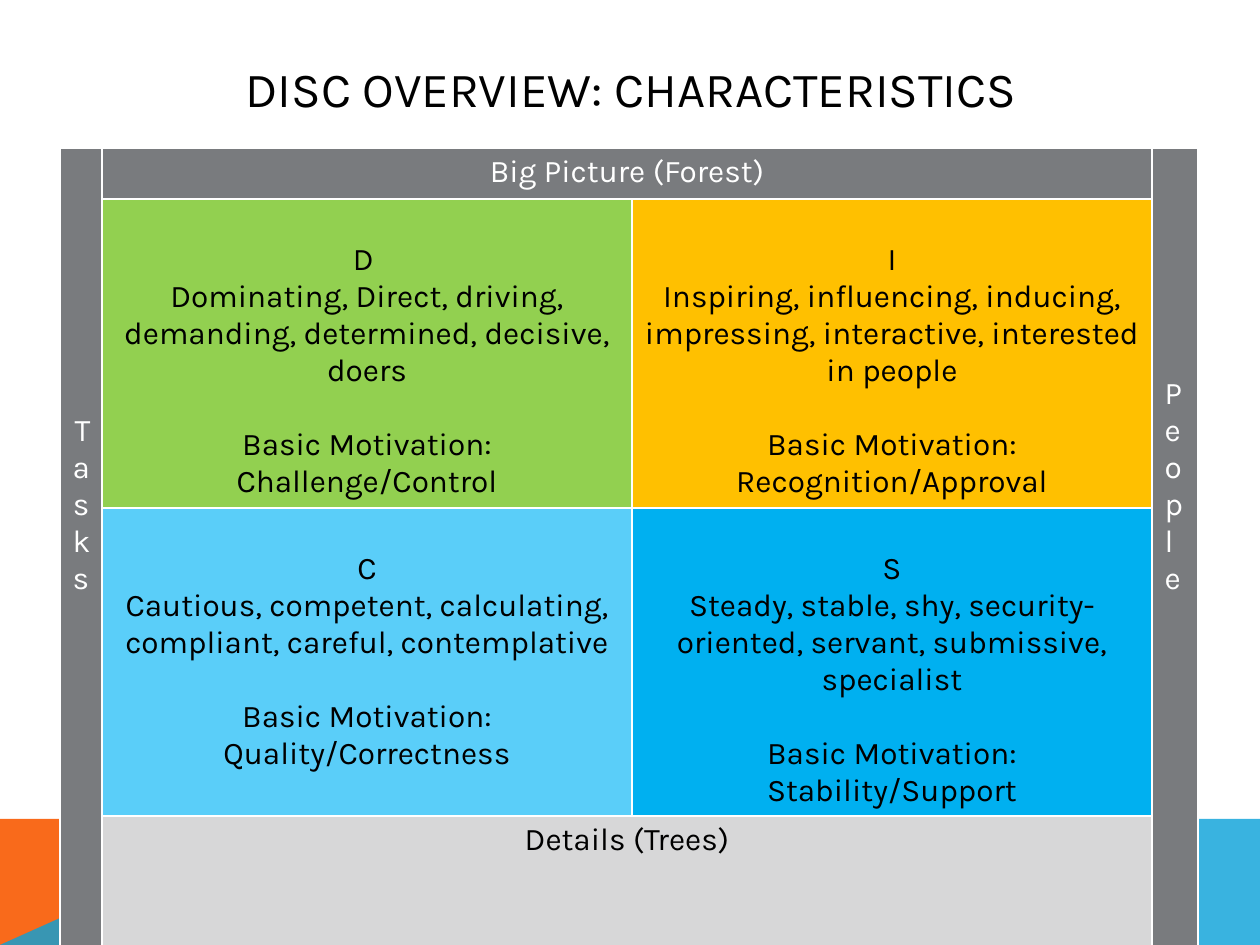
import lxml.etree
import pptx
import pptx.dml.color
import pptx.enum.text
import pptx.oxml.ns
import pptx.util

SCALE = 914400 / 126  # EMU in one px
WIDTH, HEIGHT = 1260, 945
FONT = "Karla"
LINE = 37  # px height of one line of body text
MARGIN = 6  # px above the text of a cell
COLORS = {
    "orange": "F96A1B", "blue": "08A1D9", "gray": "797B7E", "light": "D7D7D8",
    "green": "92D050", "amber": "FFC000", "sky": "5ACEF9", "azure": "00B0F0",
    "white": "FFFFFF", "black": "000000",
}
COLUMNS = [42, 530, 520, 46]
ROWS = [51, 309, 308, 129]
CENTER = pptx.enum.text.PP_ALIGN.CENTER
LEFT = pptx.enum.text.PP_ALIGN.LEFT
# row, column, fill, letter, traits, motivation
QUADRANTS = [
    (1, 1, "green", "D ",
     "Dominating, Direct, driving, demanding, determined, decisive, doers",
     "Challenge/Control"),
    (1, 2, "amber", "I",
     "Inspiring, influencing, inducing, impressing, interactive, interested in people",
     "Recognition/Approval"),
    (2, 1, "sky", "C",
     "Cautious, competent, calculating, compliant, careful, contemplative",
     "Quality/Correctness"),
    (2, 2, "azure", "S",
     "Steady, stable, shy, security-oriented, servant, submissive, specialist",
     "Stability/Support"),
]


def px(length):
    return pptx.util.Emu(round(length * SCALE))


def rgb(name):
    return pptx.dml.color.RGBColor.from_string(COLORS[name])


def add_run(paragraph, text, size, color, align=CENTER):
    paragraph.alignment = align
    run = paragraph.add_run()
    run.text = text
    run.font.name = FONT
    run.font.size = pptx.util.Pt(size)
    run.font.color.rgb = rgb(color)


def add_polygon(slide, points, color, opacity=100):
    builder = slide.shapes.build_freeform(*points[0], scale=SCALE)
    builder.add_line_segments(points[1:], close=True)
    shape = builder.convert_to_shape()
    shape.shadow.inherit = False
    shape.line.fill.background()
    shape.fill.solid()
    shape.fill.fore_color.rgb = rgb(color)
    if opacity < 100:
        value = shape._element.spPr.find(".//" + pptx.oxml.ns.qn("a:srgbClr"))
        lxml.etree.SubElement(value, pptx.oxml.ns.qn("a:alpha"), val=str(opacity * 1000))


def add_footer(slide, left, top, width, height):
    right, bottom, peak = left + width, top + height, left + 281
    add_polygon(slide, [(left, bottom), (left, top), (peak, top), (left + 493, bottom)], "orange")
    add_polygon(slide, [(left, bottom), (peak, top), (right, top), (right, bottom)], "blue", 80)


def add_title(slide, left, top, width, height):
    box = slide.shapes.add_textbox(px(left), px(top), px(width), px(height))
    frame = box.text_frame
    frame.word_wrap = True
    frame.vertical_anchor = pptx.enum.text.MSO_ANCHOR.MIDDLE
    add_run(frame.paragraphs[0], "DISC OVERVIEW: CHARACTERISTICS", 28, "black")


def add_borders(cell):
    properties = cell._tc.get_or_add_tcPr()
    for side in ("lnL", "lnR", "lnT", "lnB"):
        line = lxml.etree.SubElement(properties, pptx.oxml.ns.qn("a:" + side), w="12700")
        fill = lxml.etree.SubElement(line, pptx.oxml.ns.qn("a:solidFill"))
        lxml.etree.SubElement(fill, pptx.oxml.ns.qn("a:srgbClr"), val=COLORS["white"])


def fill_cell(cell, color):
    cell.fill.solid()
    cell.fill.fore_color.rgb = rgb(color)


def write_band(table, first, last, text, fill, color="white", align=CENTER, lines_above=0):
    """Merge the cells from first to last and label them, some lines below the top."""
    cell = table.cell(*first)
    cell.merge(table.cell(*last))
    fill_cell(cell, fill)
    cell.margin_top = px(MARGIN + lines_above * LINE)
    add_run(cell.text_frame.paragraphs[0], text, 18, color, align)


def write_quadrant(cell, fill, letter, traits, motivation):
    fill_cell(cell, fill)
    cell.margin_top = px(MARGIN + LINE)
    frame = cell.text_frame
    add_run(frame.paragraphs[0], letter, 18, "black")
    add_run(frame.add_paragraph(), traits, 18, "black")
    paragraph = frame.add_paragraph()
    paragraph.space_before = pptx.util.Pt(21)
    add_run(paragraph, "Basic Motivation: " + motivation, 18, "black")


def add_matrix(slide, left, top):
    frame = slide.shapes.add_table(
        len(ROWS), len(COLUMNS), px(left), px(top), px(sum(COLUMNS)), px(sum(ROWS)))
    table = frame.table
    table.first_row = table.horz_banding = False
    for column, width in zip(table.columns, COLUMNS):
        column.width = px(width)
    for row, height in zip(table.rows, ROWS):
        row.height = px(height)
    for cell in table.iter_cells():
        add_borders(cell)
        fill_cell(cell, "gray")
    write_band(table, (0, 0), (3, 0), "Tasks", "gray", lines_above=7)
    write_band(table, (0, 3), (3, 3), "People", "gray", align=LEFT, lines_above=6)
    write_band(table, (0, 1), (0, 2), "Big Picture (Forest)", "gray")
    write_band(table, (3, 1), (3, 2), "Details (Trees)", "light", "black")
    for row, column, *content in QUADRANTS:
        write_quadrant(table.cell(row, column), *content)


def main():
    presentation = pptx.Presentation()
    presentation.slide_width, presentation.slide_height = px(WIDTH), px(HEIGHT)
    slide = presentation.slides.add_slide(presentation.slide_layouts[6])
    add_footer(slide, 0, 819, WIDTH, 126)
    add_matrix(slide, 60, 148)
    add_title(slide, 113, 50, 1036, 76)
    presentation.save("out.pptx")


if __name__ == "__main__":
    main()
